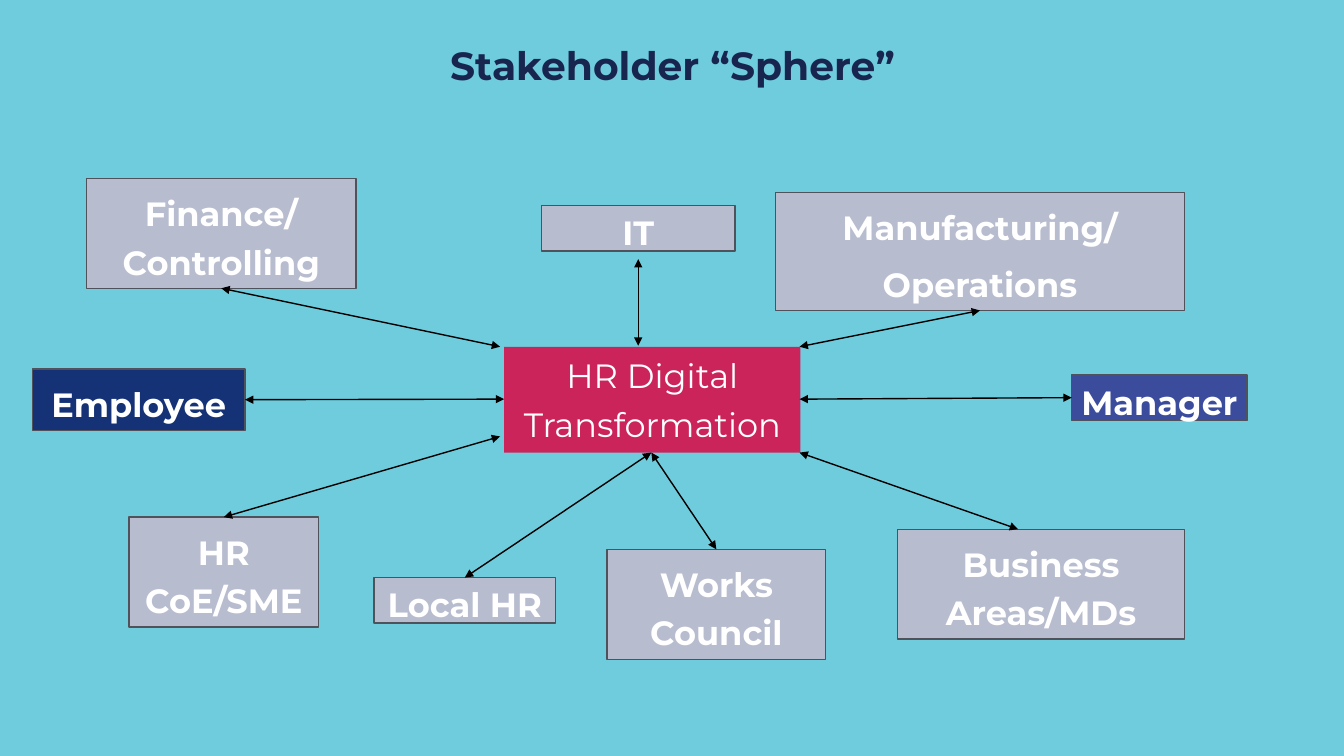
from lxml.etree import SubElement
from pptx import Presentation
from pptx.dml.color import RGBColor
from pptx.enum.shapes import MSO_CONNECTOR, MSO_SHAPE
from pptx.enum.text import MSO_ANCHOR, MSO_AUTO_SIZE, PP_ALIGN
from pptx.oxml.ns import qn
from pptx.util import Inches, Pt

FONT = "Montserrat"
SKY, NAVY, WHITE, BLACK = "6FCCDD", "18254F", "FFFFFF", "000000"
CRIMSON, GREY, OUTLINE = "CB245B", "B7BCCF", "50525B"
EMPLOYEE_BLUE, MANAGER_BLUE = "153276", "3C4C9D"

TITLE = "Stakeholder “Sphere”"
TITLE_AREA = (1.63, 0.41, 10.08, 0.65)
HUB = (["HR Digital", "Transformation"], (5, 3.44, 2.94, 1.05))

# Where an arrow leaves a box, as fractions of its width and height
TOP, BOTTOM, LEFT, RIGHT = (0.5, 0), (0.5, 1), (0, 0.5), (1, 0.5)

# Lines, area (left, top, width, height), fill, arrow start, arrow end at the hub
STAKEHOLDERS = [
    (["Finance/ Controlling"], (0.86, 1.77, 2.67, 1.09), GREY, BOTTOM, (4.96, 3.44)),
    (["IT"], (5.37, 2.04, 1.92, 0.45), GREY, (0.5, 1.18), (6.33, 3.43)),
    (["Manufacturing/", "Operations"], (7.69, 1.91, 4.06, 1.17), GREY, BOTTOM, (7.93, 3.44)),
    (["Employee"], (0.32, 3.66, 2.11, 0.61), EMPLOYEE_BLUE, RIGHT, (5, 3.96)),
    (["Manager"], (10.63, 3.72, 1.74, 0.45), MANAGER_BLUE, LEFT, (7.93, 3.96)),
    (["HR CoE/SME"], (1.28, 5.13, 1.88, 1.09), GREY, TOP, (4.96, 4.33)),
    (["Local HR"], (3.71, 5.73, 1.8, 0.45), GREY, TOP, (6.46, 4.49)),
    (["Business Areas/MDs"], (8.9, 5.25, 2.85, 1.09), GREY, (0.42, 0), (7.93, 4.49)),
    (["Works Council"], (6.02, 5.45, 2.17, 1.09), GREY, TOP, (6.46, 4.49)),
]


def color(value):
    return RGBColor.from_string(value)


def set_all(target, values):
    for name, value in values.items():
        setattr(target, name, value)


def write(frame, lines, size, shade, bold, spacing):
    """Fill a text frame with centred paragraphs, one per line."""
    for index, line in enumerate(lines):
        para = frame.paragraphs[0] if index == 0 else frame.add_paragraph()
        set_all(para, {"alignment": PP_ALIGN.CENTER, "line_spacing": spacing,
                       "space_before": Pt(6 if index else 0)})
        span = para.add_run()
        span.text = line
        set_all(span.font, {"name": FONT, "size": Pt(size), "bold": bold})
        span.font.color.rgb = color(shade)


def add_box(page, lines, area, fill, outline=None, bold=True, spacing=1.2,
            anchor=MSO_ANCHOR.MIDDLE):
    box = page.shapes.add_shape(MSO_SHAPE.RECTANGLE, *map(Inches, area))
    box.shadow.inherit = False
    box.fill.solid()
    box.fill.fore_color.rgb = color(fill)
    if outline:
        box.line.color.rgb = color(outline)
        box.line.width = Pt(1)
    else:
        box.line.fill.background()
    margins = {f"margin_{side}": Inches(0.08) for side in ("left", "right", "top", "bottom")}
    set_all(box.text_frame, {"word_wrap": True, "auto_size": MSO_AUTO_SIZE.NONE,
                             "vertical_anchor": anchor, **margins})
    write(box.text_frame, lines, 24, WHITE, bold, spacing)


def add_double_arrow(page, start, end):
    arrow = page.shapes.add_connector(MSO_CONNECTOR.STRAIGHT, *map(Inches, start + end))
    arrow.line.color.rgb = color(BLACK)
    arrow.line.width = Pt(1)
    line = arrow.line._get_or_add_ln()
    for tip in ("a:headEnd", "a:tailEnd"):
        SubElement(line, qn(tip), type="triangle")
    SubElement(arrow._element.spPr, qn("a:effectLst"))


def add_title(page):
    title = page.shapes.title
    set_all(title, dict(zip(("left", "top", "width", "height"), map(Inches, TITLE_AREA))))
    set_all(title.text_frame, {"word_wrap": True, "auto_size": MSO_AUTO_SIZE.NONE,
                               "vertical_anchor": MSO_ANCHOR.TOP})
    write(title.text_frame, [TITLE], 28, NAVY, True, 0.9)


def main():
    deck = Presentation()
    set_all(deck, {"slide_width": Inches(13.33), "slide_height": Inches(7.5)})
    page = deck.slides.add_slide(deck.slide_layouts[5])
    page.background.fill.solid()
    page.background.fill.fore_color.rgb = color(SKY)

    add_title(page)
    add_box(page, *HUB, CRIMSON, bold=False, spacing=1.0, anchor=MSO_ANCHOR.TOP)
    for lines, area, fill, _, _ in STAKEHOLDERS:
        add_box(page, lines, area, fill, OUTLINE)
    for _, (left, top, width, height), _, (across, down), hub_point in STAKEHOLDERS:
        add_double_arrow(page, (left + across * width, top + down * height), hub_point)
    deck.save("out.pptx")


if __name__ == "__main__":
    main()
